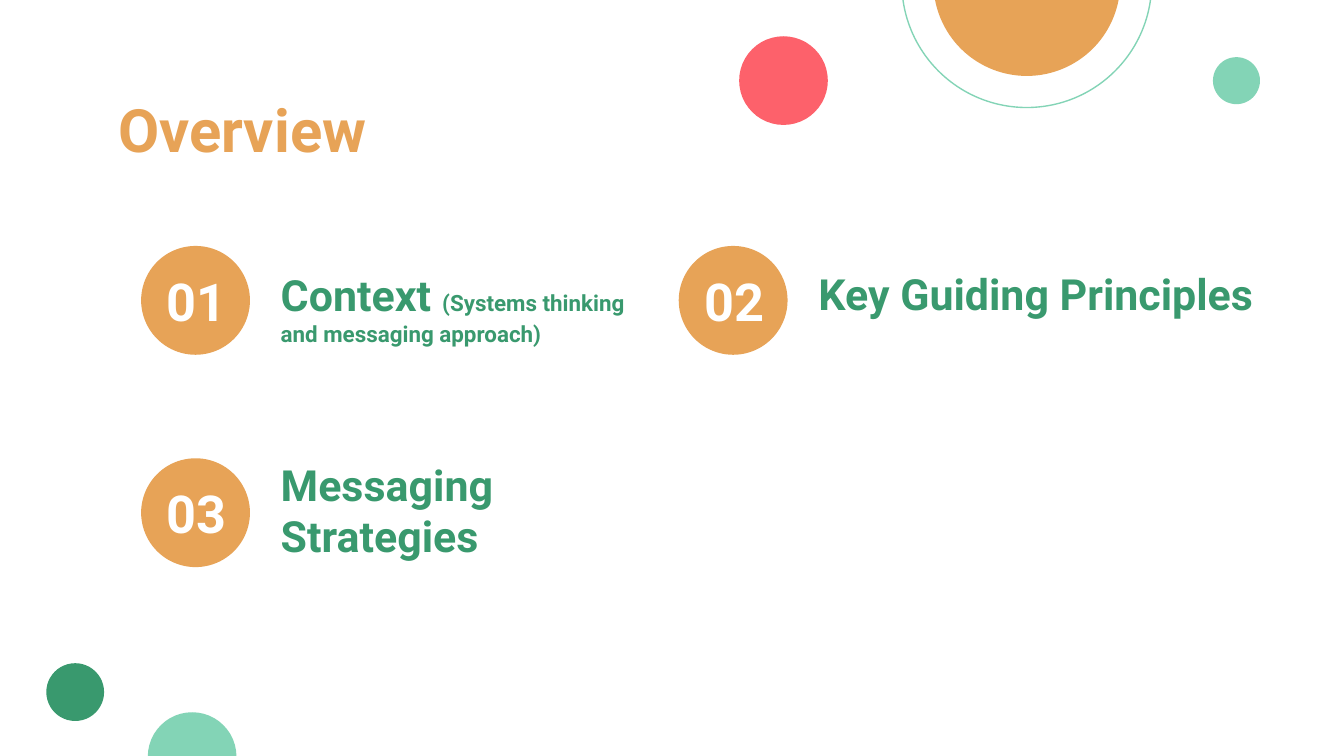
from pptx import Presentation
from pptx.dml.color import RGBColor
from pptx.enum import shapes, text
from pptx.util import Inches, Pt

COLORS = {
    "orange": "E7A357",
    "mint": "83D4B6",
    "coral": "FD616B",
    "green": "39996E",
    "white": "FFFFFF",
}
FONT = "Roboto"
BADGE_SIZE = 0.81
COLUMNS = (1.05, 5.05)
ROWS = (1.83, 3.41)

# centre x, centre y, diameter, colour
DOTS = [
    (7.64, -0.13, 1.39, "orange"),
    (9.2, 0.6, 0.35, "mint"),
    (5.83, 0.6, 0.66, "coral"),
    (1.43, 5.63, 0.66, "mint"),
    (0.56, 5.15, 0.43, "green"),
]

# column, row, heading runs, heading drop below the badge top, width, height
TOPICS = [
    (0, 0, [("Context ", 23), ("(Systems thinking and messaging approach)", 12)],
     0.07, 2.95, 1.81),
    (1, 0, [("Key Guiding Principles", 23)], 0.06, 3.91, 0.68),
    (0, 1, [("Messaging Strategies", 23)], -0.1, 2.95, 0.68),
]


def rgb(name):
    return RGBColor.from_string(COLORS[name])


def add_circle(slide, center_x, center_y, diameter, fill=None, outline=None):
    circle = slide.shapes.add_shape(
        shapes.MSO_SHAPE.OVAL,
        Inches(center_x - diameter / 2), Inches(center_y - diameter / 2),
        Inches(diameter), Inches(diameter))
    circle.shadow.inherit = False
    if fill:
        circle.fill.solid()
        circle.fill.fore_color.rgb = rgb(fill)
    else:
        circle.fill.background()
    if outline:
        circle.line.color.rgb = rgb(outline)
        circle.line.width = Pt(0.75)
    else:
        circle.line.fill.background()


def write(frame, runs, color, align=text.PP_ALIGN.LEFT,
          anchor=text.MSO_ANCHOR.TOP):
    """Fill a text frame with one bold paragraph of (wording, size) runs."""
    frame.word_wrap = True
    frame.auto_size = text.MSO_AUTO_SIZE.NONE
    frame.vertical_anchor = anchor
    frame.margin_left = frame.margin_right = Inches(0.1)
    frame.margin_top = frame.margin_bottom = Inches(0.1)
    paragraph = frame.paragraphs[0]
    paragraph.alignment = align
    for wording, size in runs:
        run = paragraph.add_run()
        run.text = wording
        run.font.name = FONT
        run.font.size = Pt(size)
        run.font.bold = True
        run.font.color.rgb = rgb(color)


def add_label(slide, left, top, width, height, runs, color, **layout):
    label = slide.shapes.add_textbox(
        Inches(left), Inches(top), Inches(width), Inches(height))
    write(label.text_frame, runs, color, **layout)


def add_title(slide, wording):
    title = slide.shapes.title
    title.left, title.top = Inches(0.78), Inches(0.59)
    title.width, title.height = Inches(8.44), Inches(0.74)
    write(title.text_frame, [(wording, 32)], "orange")


def add_topic(slide, number, column, row, heading, drop, width, height):
    left, top = COLUMNS[column], ROWS[row]
    radius = BADGE_SIZE / 2
    add_circle(slide, left + radius, top + radius, BADGE_SIZE, "orange")
    add_label(slide, left + 0.05, top, 0.73, BADGE_SIZE,
              [(f"{number:02}", 28)], "white",
              align=text.PP_ALIGN.CENTER, anchor=text.MSO_ANCHOR.MIDDLE)
    add_label(slide, left + 0.94, top + drop, width, height, heading, "green")


def main():
    deck = Presentation()
    deck.slide_width = Inches(10)
    deck.slide_height = deck.slide_width * 9 // 16
    slide = deck.slides.add_slide(deck.slide_layouts[5])

    add_circle(slide, 7.64, -0.13, 1.86, outline="mint")
    for dot in DOTS:
        add_circle(slide, *dot)
    add_title(slide, "Overview")
    for number, topic in enumerate(TOPICS, start=1):
        add_topic(slide, number, *topic)

    deck.save("out.pptx")


if __name__ == "__main__":
    main()
